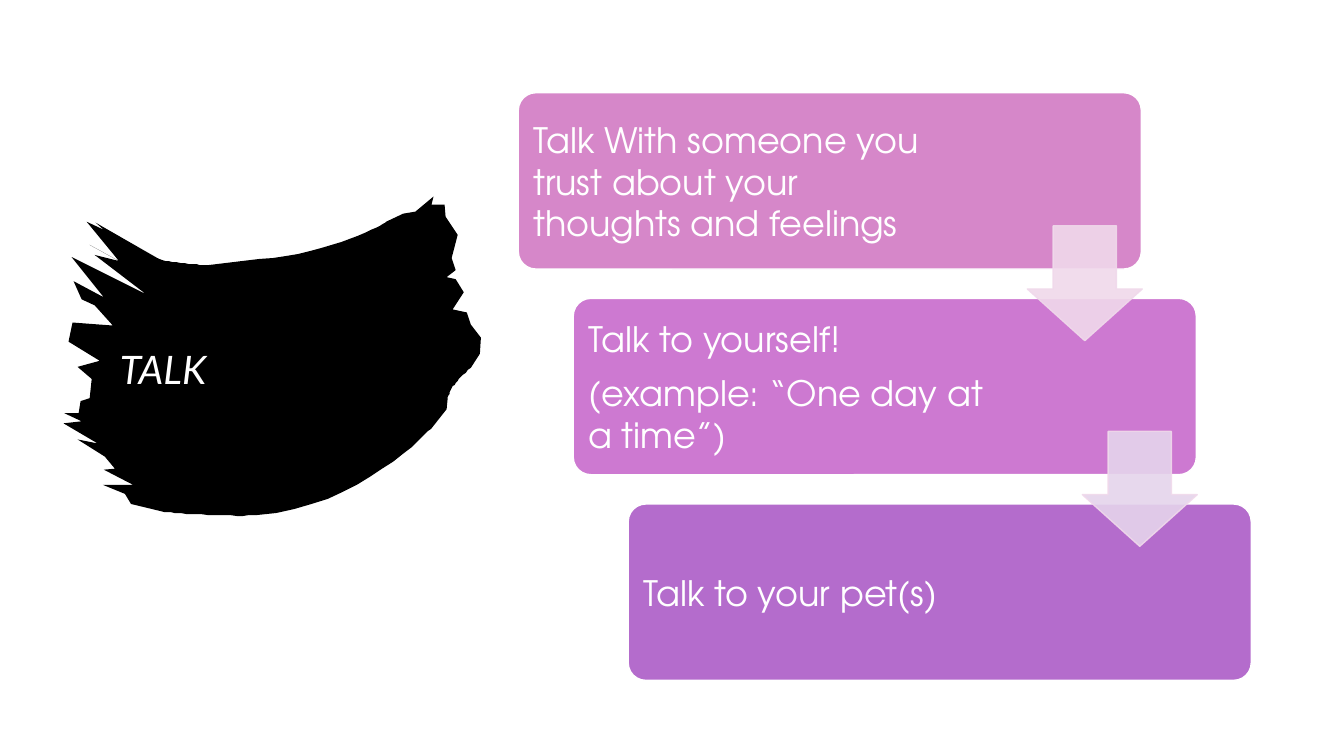
from dataclasses import dataclass

from lxml import etree
from pptx import Presentation
from pptx import util as u
from pptx.dml.color import RGBColor
from pptx.enum import shapes, text
from pptx.oxml import ns

WIDE, HIGH = u.Inches(13.33), u.Inches(7.5)
COL, ROW = WIDE / 100, HIGH / 100  # grid of 100 columns by 100 rows
DOT = u.Inches(0.01)  # fine grid of the brush stroke
WHITE, PALE = "FFFFFF", "F0D9EB"


@dataclass
class Box:
    x: float
    y: float
    w: float
    h: float

    def move(self, dx: float, dy: float) -> "Box":
        return Box(self.x + dx, self.y + dy, self.w, self.h)

    def emu(self) -> tuple[int, ...]:
        return (round(self.x * COL), round(self.y * ROW),
                round(self.w * COL), round(self.h * ROW))


@dataclass
class Step:
    lines: list[str]
    fill: str
    span: float


STEPS = [
    Step(["Talk With someone you trust about your thoughts and feelings"],
         "D687C9", 32.18),
    Step(["Talk to yourself!", "(example: “One day at a time”)"], "CD79D1", 33.01),
    Step(["Talk to your pet(s)"], "B46CCC", 33.01),
]
ARROWS = [PALE, "E5D4EC"]
CARD = Box(38.56, 12.27, 46.36, 23.33)
HEAD = Box(76.44, 29.87, 8.55, 15.2)
SHIFT, DROP = 4.09, 27.2
TITLE = Box(8.18, 38.27, 24.68, 21.87)

# Two numbers are a corner; six are two handles and the end of a curve.
BRUSH = [
    (430, 195), (428, 203), (441, 203), (442, 215), (454, 233), (448, 256),
    (452, 268), (443, 275), (452, 277), (460, 290), (449, 307), (463, 310),
    (467, 322), (477, 335), (476, 351), (467, 365),
    (452, 378, 446, 386, 444, 396), (443, 406), (428, 425),
    (427, 425, 357, 504, 255, 511), (239, 513, 172, 509, 163, 508),
    (130, 500), (124, 490), (102, 481), (132, 481), (103, 466), (114, 465),
    (104, 453), (77, 436), (97, 440), (63, 420), (81, 418), (64, 410),
    (78, 410), (80, 398), (89, 395), (91, 376), (77, 364), (99, 358),
    (68, 339), (72, 320), (112, 323), (94, 303), (81, 297), (73, 279),
    (103, 295), (71, 255), (145, 292), (94, 253), (118, 259), (89, 243),
    (118, 259), (86, 220), (103, 228), (95, 221),
    (156, 256), (166, 261, 201, 263, 207, 263), (257, 257),
    (332, 251, 381, 222, 383, 220), (400, 212), (412, 210),
]


def trace(path: list[tuple[int, ...]], cuts: int = 16) -> list[tuple[float, float]]:
    """Turn corners and cubic curves into plain points."""
    out: list[tuple[float, float]] = []
    for item in path:
        if len(item) == 2:
            out.append(item)
            continue
        knots = (out[-1], item[:2], item[2:4], item[4:])
        for n in range(1, cuts + 1):
            t = n / cuts
            mix = ((1 - t) ** 3, 3 * t * (1 - t) ** 2, 3 * t * t * (1 - t), t ** 3)
            out.append(tuple(sum(m * p[i] for m, p in zip(mix, knots))
                             for i in (0, 1)))
    return out


def tint(form, code: str) -> None:
    """Set a solid colour on a fill."""
    form.solid()
    form.fore_color.rgb = RGBColor.from_string(code)


def shape(page, kind, box: Box, adj: tuple[float, ...], fill: str,
          line: str, alpha: int = 100) -> None:
    item = page.shapes.add_shape(kind, *box.emu())
    item.shadow.inherit = False
    for i, val in enumerate(adj):
        item.adjustments[i] = val
    tint(item.fill, fill)
    item.line.width = u.Pt(1)
    tint(item.line.fill, line)
    if alpha < 100:
        for clr in list(item.element.iter(ns.qn("a:srgbClr"))):
            etree.SubElement(clr, ns.qn("a:alpha"), val=str(alpha * 1000))


def write(page, box: Box, lines: list[str], *, size: float, font: str,
          italic: bool = False, inset: float = 0.1, after: float = 0,
          lead: float | None = None) -> None:
    frame = page.shapes.add_textbox(*box.emu()).text_frame
    frame.word_wrap = True
    frame.vertical_anchor = text.MSO_ANCHOR.MIDDLE
    frame.margin_top = frame.margin_bottom = u.Inches(inset)
    frame.margin_left = frame.margin_right = u.Inches(0.1)
    for i, line in enumerate(lines):
        para = frame.add_paragraph() if i else frame.paragraphs[0]
        para.space_after = u.Pt(after)
        para.line_spacing = lead
        run = para.add_run()
        run.text = line
        run.font.size, run.font.name, run.font.italic = u.Pt(size), font, italic
        tint(run.font.fill, WHITE)


def brush(page) -> None:
    first, *rest = trace(BRUSH)
    pen = page.shapes.build_freeform(*first, scale=DOT)
    pen.add_line_segments(rest)
    item = pen.convert_to_shape()
    item.shadow.inherit = False
    tint(item.fill, "000000")
    item.line.fill.background()


def main() -> None:
    deck = Presentation()
    deck.slide_width, deck.slide_height = WIDE, HIGH
    page = deck.slides.add_slide(deck.slide_layouts[6])
    brush(page)
    write(page, TITLE, ["TALK"], size=28, font="Lato", italic=True,
          inset=0.05, lead=0.9)
    for i, step in enumerate(STEPS):
        card = CARD.move(i * SHIFT, i * DROP)
        shape(page, shapes.MSO_SHAPE.ROUNDED_RECTANGLE, card, (0.1,), step.fill, WHITE)
        write(page, Box(card.x + 0.38, card.y + 0.67, step.span, 22), step.lines,
              size=25, font="TeX Gyre Adventor", after=8.75)
    for i, fill in enumerate(ARROWS):
        shape(page, shapes.MSO_SHAPE.DOWN_ARROW, HEAD.move(i * SHIFT, i * DROP),
              (0.55, 0.45), fill, PALE, alpha=90)
    deck.save("out.pptx")


if __name__ == "__main__":
    main()
